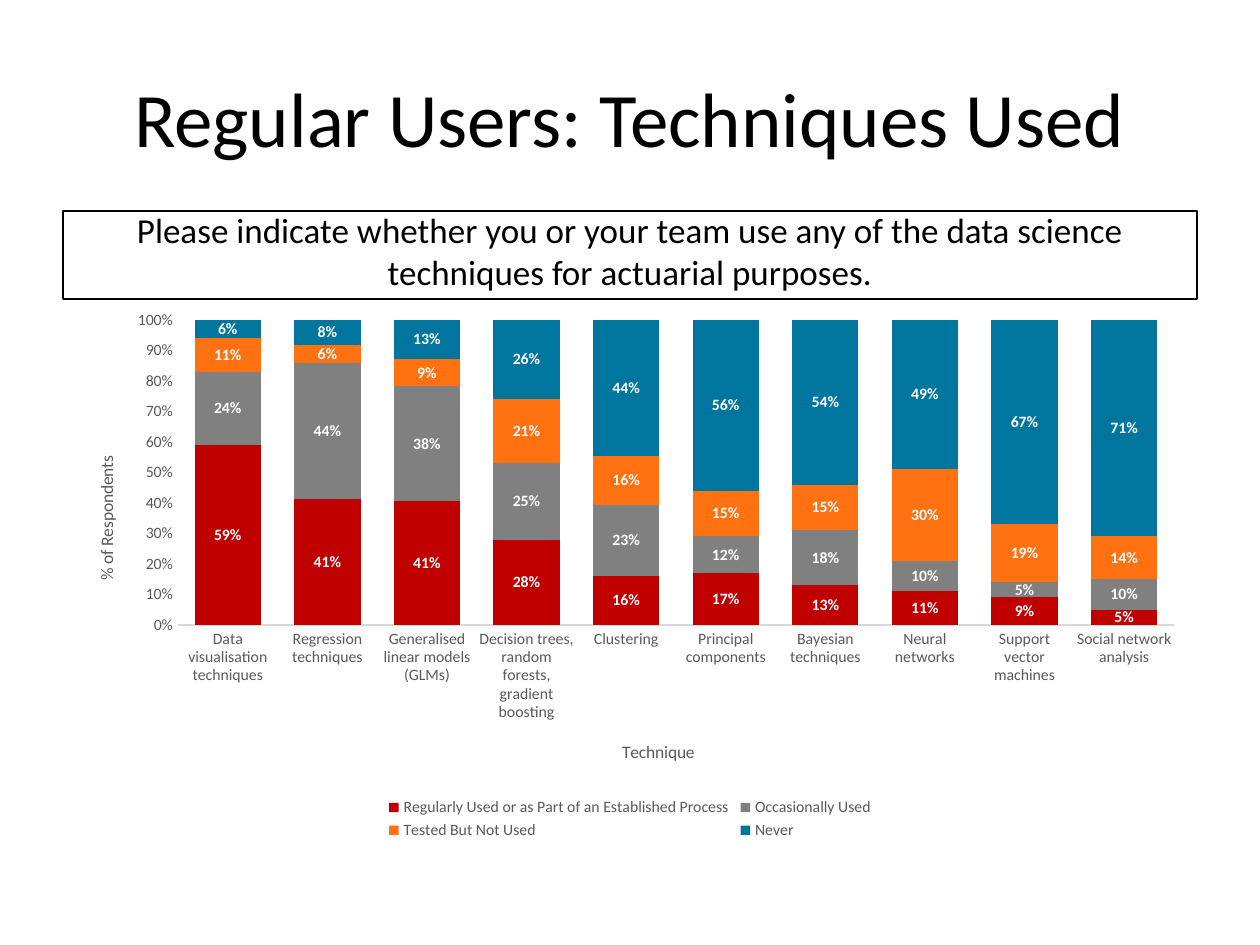
from lxml.etree import SubElement
from pptx import Presentation
from pptx.chart.data import CategoryChartData
from pptx.dml.color import RGBColor
from pptx.enum.chart import XL_CHART_TYPE as ChartType
from pptx.enum.chart import XL_LABEL_POSITION as LabelPosition
from pptx.enum.chart import XL_LEGEND_POSITION as LegendPosition
from pptx.enum.chart import XL_TICK_MARK as TickMark
from pptx.enum.shapes import MSO_SHAPE as ShapeType
from pptx.enum.text import MSO_ANCHOR as Anchor
from pptx.enum.text import PP_ALIGN as Align
from pptx.oxml import parse_xml
from pptx.oxml.ns import nsdecls, qn
from pptx.util import Emu, Pt

PX_PER_INCH = 126
COLORS = {
    "black": "000000",
    "white": "FFFFFF",
    "label": "595959",
    "axis": "D9D9D9",
    "regular": "C00000",
    "occasional": "808080",
    "tested": "FF7111",
    "never": "00759E",
}
TECHNIQUES = [
    "Data visualisation techniques", "Regression techniques",
    "Generalised linear models (GLMs)",
    "Decision trees, random forests, gradient boosting", "Clustering",
    "Principal components", "Bayesian techniques", "Neural networks",
    "Support vector machines", "Social network analysis",
]
USAGE = [
    ("Regularly Used or as Part of an Established Process", "regular",
     [0.59, 0.41, 0.41, 0.28, 0.16, 0.17, 0.13, 0.11, 0.09, 0.05]),
    ("Occasionally Used", "occasional",
     [0.24, 0.44, 0.38, 0.25, 0.23, 0.12, 0.18, 0.1, 0.05, 0.1]),
    ("Tested But Not Used", "tested",
     [0.11, 0.06, 0.09, 0.21, 0.16, 0.15, 0.15, 0.3, 0.19, 0.14]),
    ("Never", "never",
     [0.06, 0.08, 0.13, 0.26, 0.44, 0.56, 0.54, 0.49, 0.67, 0.71]),
]


def px(length):
    return Emu(round(length * 914400 / PX_PER_INCH))


def rgb(name):
    return RGBColor.from_string(COLORS[name])


def place(element, box, chart_box, inner=False):
    """Fix a chart part at a slide position; box is left, top[, width, height]."""
    left, top, width, height = chart_box
    fractions = [(box[0] - left) / width, (box[1] - top) / height]
    if len(box) == 4:
        fractions += [box[2] / width, box[3] / height]
    layout = element.find(qn("c:layout"))
    if layout is None:
        layout = parse_xml(f"<c:layout {nsdecls('c')}/>")
        overlay = element.find(qn("c:overlay"))
        if overlay is None:
            element.insert(0, layout)
        else:
            overlay.addprevious(layout)
    manual = SubElement(layout, qn("c:manualLayout"))
    if inner:
        SubElement(manual, qn("c:layoutTarget")).set("val", "inner")
    for mode in ("xMode", "yMode"):
        SubElement(manual, qn(f"c:{mode}")).set("val", "edge")
    for side, fraction in zip("xywh", fractions):
        SubElement(manual, qn(f"c:{side}")).set("val", f"{fraction:.4f}")


class SlideBuilder:
    font_name = "Calibri"

    def __init__(self, slide):
        self.slide = slide

    def style_font(self, font, size, color, bold=False):
        font.name = self.font_name
        font.size = Pt(size)
        font.bold = bold
        font.color.rgb = rgb(color)

    def fill_text(self, shape, text, size, anchor):
        frame = shape.text_frame
        frame.word_wrap = True
        frame.vertical_anchor = anchor
        paragraph = frame.paragraphs[0]
        paragraph.alignment = Align.CENTER
        run = paragraph.add_run()
        run.text = text
        self.style_font(run.font, size, "black")

    def text(self, box, text, size):
        shape = self.slide.shapes.add_textbox(*map(px, box))
        self.fill_text(shape, text, size, Anchor.MIDDLE)

    def outlined_text(self, box, text, size):
        shape = self.slide.shapes.add_shape(ShapeType.RECTANGLE, *map(px, box))
        shape.shadow.inherit = False
        shape.fill.background()
        shape.line.color.rgb = rgb("black")
        shape.line.width = Pt(0.75)
        self.fill_text(shape, text, size, Anchor.BOTTOM)

    def axis(self, axis, title, position, chart_box, rotation=0):
        axis.has_major_gridlines = False
        axis.major_tick_mark = axis.minor_tick_mark = TickMark.NONE
        self.style_font(axis.tick_labels.font, 9, "label")
        run = axis.axis_title.text_frame.paragraphs[0].add_run()
        run.text = title
        self.style_font(run.font, 10, "label")
        element = axis.axis_title._element
        body = next(element.iter(qn("a:bodyPr")))
        body.set("rot", str(rotation * 60000))
        body.set("vert", "horz")
        place(element, position, chart_box)

    def stacked_chart(self, box, categories, series_rows):
        data = CategoryChartData(number_format="0%")
        data.categories = categories
        for name, _, values in series_rows:
            data.add_series(name, values)
        chart = self.slide.shapes.add_chart(
            ChartType.COLUMN_STACKED_100, *map(px, box), data).chart
        chart.has_title = False
        self.style_font(chart.font, 10, "black")

        plot = chart.plots[0]
        plot.gap_width = 50
        plot.overlap = 100
        plot.vary_by_categories = False
        for series, (_, color, _) in zip(plot.series, series_rows):
            series.format.fill.solid()
            series.format.fill.fore_color.rgb = rgb(color)
            labels = series.data_labels
            labels.show_value = True
            labels.position = LabelPosition.CENTER
            labels.number_format = "0%"
            labels.number_format_is_linked = False
            self.style_font(labels.font, 9, "white", bold=True)

        self.axis(chart.category_axis, "Technique", (619, 737), box)
        chart.category_axis.format.line.color.rgb = rgb("axis")
        chart.category_axis.format.line.width = Pt(0.75)
        value_axis = chart.value_axis
        self.axis(value_axis, "% of Respondents", (92, 453), box, rotation=-90)
        value_axis.format.line.fill.background()
        value_axis.maximum_scale = 1
        value_axis.major_unit = 0.1
        value_axis.tick_labels.number_format = "0%"
        value_axis.tick_labels.number_format_is_linked = False

        chart.has_legend = True
        legend = chart.legend
        legend.position = LegendPosition.BOTTOM
        legend.include_in_layout = False
        self.style_font(legend.font, 9, "label")
        place(legend._element, (382, 794, 496, 50), box)
        plot_area = next(chart._chartSpace.iter(qn("c:plotArea")))
        place(plot_area, (178, 320, 996, 305), box, inner=True)


def main():
    presentation = Presentation()
    presentation.slide_width = px(1260)
    presentation.slide_height = px(945)
    builder = SlideBuilder(
        presentation.slides.add_slide(presentation.slide_layouts[6]))
    builder.text((63, 38, 1134, 157), "Regular Users: Techniques Used", 44)
    builder.outlined_text(
        (63, 211, 1134, 88),
        "Please indicate whether you or your team use any of the data science "
        "techniques for actuarial purposes.", 20)
    builder.stacked_chart((63, 300, 1134, 544), TECHNIQUES, USAGE)
    presentation.save("out.pptx")


if __name__ == "__main__":
    main()
